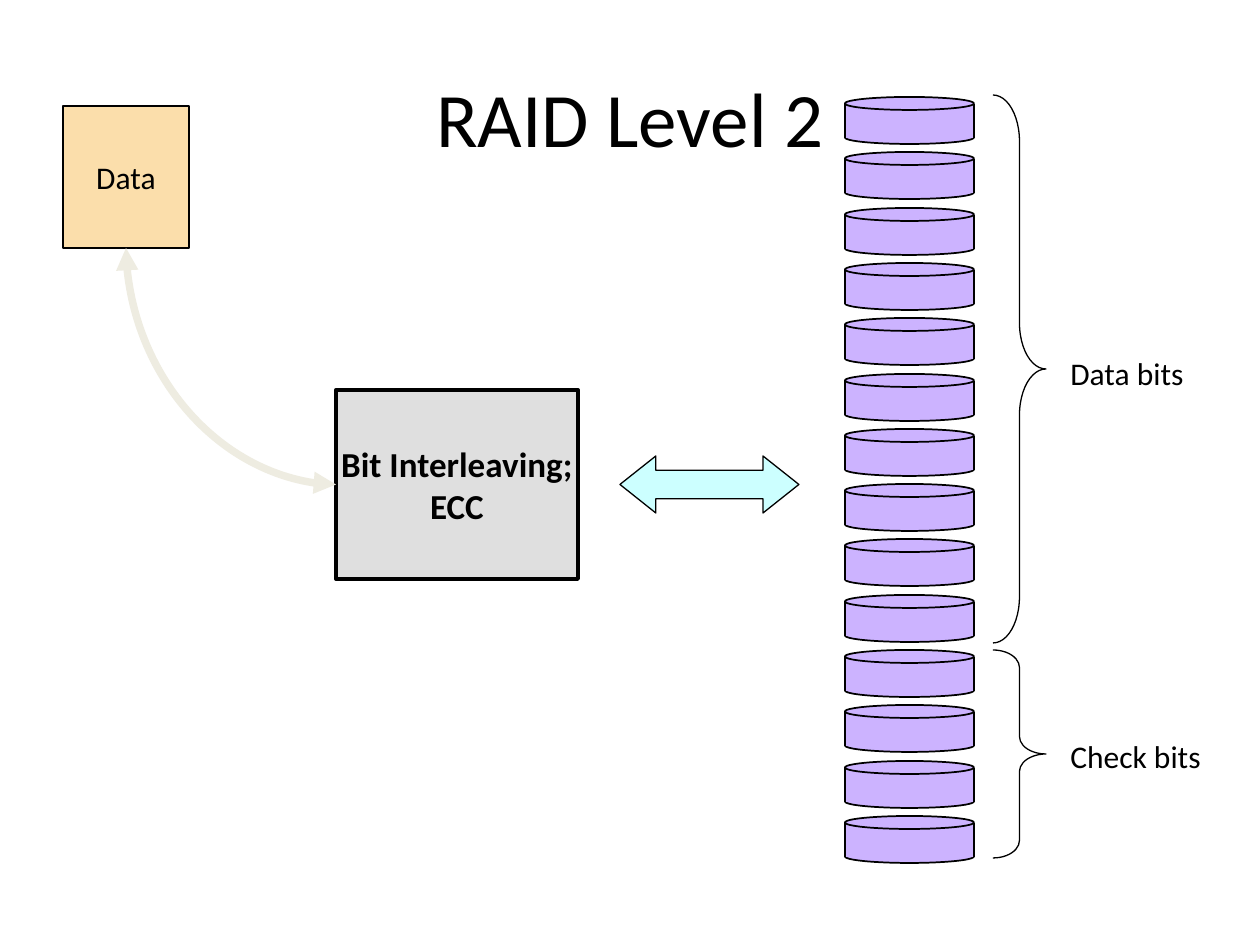
import pptx
import pptx.util
import pptx.dml.color
import pptx.enum.shapes
import pptx.enum.text
import lxml.etree
from pptx.oxml.ns import qn

RGBColor = pptx.dml.color.RGBColor
Pt = pptx.util.Pt
Kind = pptx.enum.shapes.MSO_SHAPE
Link = pptx.enum.shapes.MSO_CONNECTOR
Align = pptx.enum.text.PP_ALIGN
Anchor = pptx.enum.text.MSO_ANCHOR

BLACK = RGBColor(0x00, 0x00, 0x00)
PURPLE = RGBColor(0xCC, 0xB3, 0xFF)
GREY = RGBColor(0xDF, 0xDF, 0xDF)
CREAM = RGBColor(0xEE, 0xEC, 0xE1)
PEACH = RGBColor(0xFB, 0xDE, 0xAB)
CYAN = RGBColor(0xCC, 0xFF, 0xFF)
PX = 914400 / 126


def write(shape, text, size=18, bold=False, align=Align.CENTER, anchor=Anchor.MIDDLE, wrap=False):
    frame = shape.text_frame
    frame.text = text
    frame.word_wrap = wrap
    frame.vertical_anchor = anchor
    for para in frame.paragraphs:
        para.alignment = align
        para.font.name = "Calibri"
        para.font.size = Pt(size)
        para.font.bold = bold
        para.font.color.rgb = BLACK


def draw(shapes, kind, box, fill=None, line=0.75):
    shape = shapes.add_shape(kind, *[round(n * PX) for n in box])
    shape.shadow.inherit = False
    if fill is None:
        shape.fill.background()
    else:
        shape.fill.solid()
        shape.fill.fore_color.rgb = fill
    if line:
        shape.line.color.rgb = BLACK
        shape.line.width = Pt(line)
    else:
        shape.line.fill.background()
    return shape


deck = pptx.Presentation()
deck.slide_width = round(1260 * PX)
deck.slide_height = round(945 * PX)
slide = deck.slides.add_slide(deck.slide_layouts[5])
shapes = slide.shapes

title = shapes.title
title.left, title.top, title.width, title.height = [round(n * PX) for n in (63, 38, 1134, 157)]
write(title, "RAID Level 2", size=44, wrap=True)

left, wide = 845, 129
for row in range(14):
    top = round(97 + row * 719 / 13)
    disk = shapes.add_group_shape().shapes
    draw(disk, Kind.OVAL, (left, top + 34, wide, 13), PURPLE, 1)
    draw(disk, Kind.RECTANGLE, (left, top + 7, wide, 34), PURPLE, 0)
    draw(disk, Kind.OVAL, (left, top, wide, 13), PURPLE, 1)
    for x in (left, left + wide):
        ends = [round(n * PX) for n in (x, top + 7, x, top + 41)]
        side = disk.add_connector(Link.STRAIGHT, *ends)
        side.line.color.rgb = BLACK
        side.line.width = Pt(1)
        lxml.etree.SubElement(side._element.spPr, qn("a:effectLst"))

for top, high, bend, text, mid, wide in (
    (95, 548, 0.87, "Data bits", 348, 150),
    (650, 208, 0.33, "Check bits", 731, 192),
):
    brace = draw(shapes, Kind.RIGHT_BRACE, (993, top, 53, high))
    brace.adjustments[0] = bend
    brace.adjustments[1] = 0.5
    label = shapes.add_textbox(*[round(n * PX) for n in (1058, mid, wide, 50)])
    write(label, text, align=Align.LEFT, anchor=Anchor.TOP, wrap=True)

coder = draw(shapes, Kind.RECTANGLE, (336, 390, 242, 189), GREY, 2.25)
write(coder, "Bit Interleaving;\nECC", size=20, bold=True)
data = draw(shapes, Kind.RECTANGLE, (63, 106, 126, 142), PEACH)
write(data, "Data")

curve = shapes.add_connector(Link.CURVE, 0, 0, 0, 0)
curve.begin_connect(coder, 1)
curve.end_connect(data, 2)
curve.line.color.rgb = CREAM
curve.line.width = Pt(4.25)
props = curve._element.spPr
props.find(qn("a:prstGeom")).set("prst", "curvedConnector2")
frame = props.find(qn("a:xfrm"))
frame.flipH = frame.flipV = False
frame.set("rot", "10800000")
for tag in ("a:headEnd", "a:tailEnd"):
    lxml.etree.SubElement(props.find(qn("a:ln")), qn(tag), type="triangle")
lxml.etree.SubElement(props, qn("a:effectLst"))

arrow = draw(shapes, Kind.LEFT_RIGHT_ARROW, (620, 456, 179, 57), CYAN)
arrow.adjustments[0] = 0.5
arrow.adjustments[1] = 0.63

deck.save("out.pptx")
